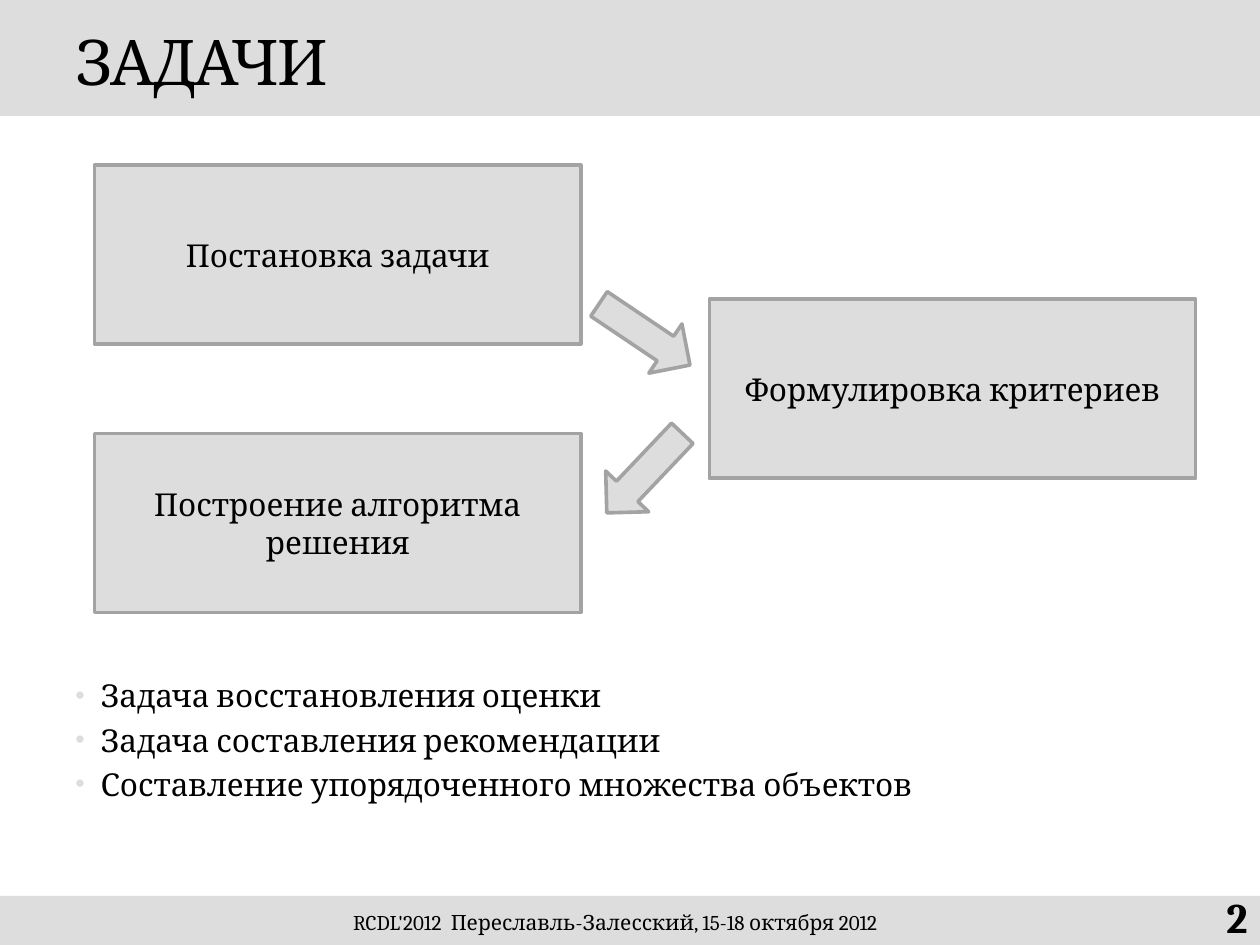
import pptx
import pptx.dml.color
import pptx.enum.shapes
import pptx.enum.text
import pptx.oxml.ns
import pptx.util
from pptx.util import Inches
import lxml.etree

RGBColor = pptx.dml.color.RGBColor
GREY = RGBColor(0xDD, 0xDD, 0xDD)
OUTLINE = RGBColor(0xA3, 0xA3, 0xA3)
BLACK = RGBColor(0, 0, 0)
FONT = "Cambria"
SHAPE = pptx.enum.shapes.MSO_SHAPE
ALIGN = pptx.enum.text.PP_ALIGN
MIDDLE = pptx.enum.text.MSO_ANCHOR.MIDDLE
TOP = pptx.enum.text.MSO_ANCHOR.TOP


def write_text(shape, text, size=18, bold=False, align=ALIGN.LEFT, anchor=MIDDLE,
               space_before=0, tracking=None):
    """Fill a shape with text, one paragraph per line."""
    frame = shape.text_frame
    frame.word_wrap = True
    frame.vertical_anchor = anchor
    frame.text = text
    for para in frame.paragraphs:
        para.alignment = align
        para.space_before = pptx.util.Pt(space_before)
        for span in para.runs:
            span.font.name = FONT
            span.font.size = pptx.util.Pt(size)
            span.font.bold = bold
            span.font.color.rgb = BLACK
            if tracking is not None:
                span.font._element.set("spc", str(tracking))
    return frame


def add_label(page, box, text, **text_format):
    label = page.shapes.add_textbox(*map(Inches, box))
    return write_text(label, text, **text_format)


def add_block(page, box, kind=SHAPE.RECTANGLE, outlined=True, rotation=0):
    block = page.shapes.add_shape(kind, *map(Inches, box))
    block.shadow.inherit = False
    block.rotation = rotation
    block.fill.solid()
    block.fill.fore_color.rgb = GREY
    if outlined:
        block.line.color.rgb = OUTLINE
        block.line.width = pptx.util.Pt(2.08)
    else:
        block.line.fill.background()
    return block


def add_bullet(para):
    """Hanging grey bullet."""
    properties = para._p.get_or_add_pPr()
    properties.set("marL", str(Inches(0.2)))
    properties.set("indent", str(-Inches(0.2)))
    qualified = pptx.oxml.ns.qn
    colour = lxml.etree.SubElement(properties, qualified("a:buClr"))
    lxml.etree.SubElement(colour, qualified("a:srgbClr"), val=str(GREY))
    lxml.etree.SubElement(properties, qualified("a:buSzPct"), val="85000")
    lxml.etree.SubElement(properties, qualified("a:buFont"), typeface="Arial")
    lxml.etree.SubElement(properties, qualified("a:buChar"), char="•")


def add_header(page, box, title):
    left, top, width, height = box
    add_block(page, box, outlined=False)
    add_label(page, (left + 0.5, top + 0.03, width - 1, height - 0.03), title,
              size=36, tracking=-100)


def add_footer(page, box, note, number):
    left, top, width, height = box
    add_block(page, box, outlined=False)
    add_label(page, (left + 0.91, top + 0.03, 7.95, 0.36), note,
              size=12, align=ALIGN.CENTER)
    add_label(page, (left + width - 1.17, top - 0.03, 1.17, height), number,
              size=24, bold=True, align=ALIGN.RIGHT)


def add_process(page, box, steps):
    """Steps zigzag between the two sides of the box, joined by block arrows."""
    left, top, width, height = box
    step_width, step_height = 3.86, 1.42
    drop = (height - step_height) / (len(steps) - 1)
    for index, text in enumerate(steps):
        step_left = left + index % 2 * (width - step_width)
        step = add_block(page, (step_left, top + index * drop, step_width, step_height))
        write_text(step, text, align=ALIGN.CENTER)

    arrow_left = left + step_width + 0.07
    for arrow_drop, rotation in ((1.11, 33.9), (2.21, 133.5)):
        add_block(page, (arrow_left, top + arrow_drop, 0.87, 0.47),
                  SHAPE.RIGHT_ARROW, rotation=rotation)


def add_task_list(page, box, tasks):
    frame = add_label(page, box, "\n".join(tasks), anchor=TOP, space_before=3.6)
    for para in frame.paragraphs:
        add_bullet(para)


def main():
    deck = pptx.Presentation()
    deck.slide_width, deck.slide_height = Inches(10), Inches(7.5)
    page = deck.slides.add_slide(deck.slide_layouts[6])

    add_header(page, (0, 0, 10, 0.92), "ЗАДАЧИ")
    add_process(page, (0.75, 1.31, 8.74, 3.55), [
        "Постановка задачи",
        "Формулировка критериев",
        "Построение алгоритма решения",
    ])
    add_task_list(page, (0.5, 5.32, 9, 1.34), [
        "Задача восстановления оценки",
        "Задача составления рекомендации",
        "Составление упорядоченного множества объектов",
    ])
    add_footer(page, (0, 7.11, 10, 0.39),
               "RCDL'2012  Переславль-Залесский, 15-18 октября 2012", "2")
    deck.save("out.pptx")


if __name__ == "__main__":
    main()
